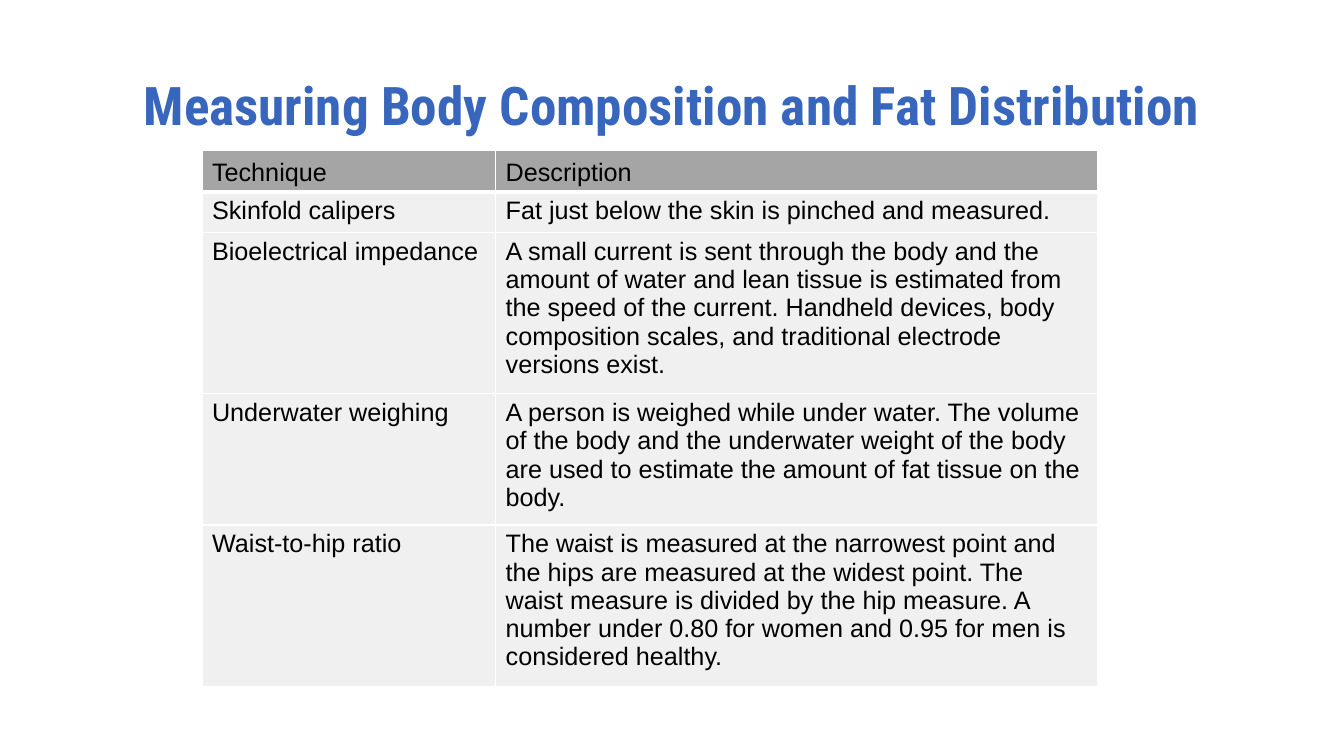
import pptx
import pptx.util
import pptx.dml.color
import pptx.enum.text
import pptx.oxml
import pptx.oxml.ns
from pptx.util import Cm

BLUE = pptx.dml.color.RGBColor(0x37, 0x66, 0xBC)
BLACK = pptx.dml.color.RGBColor(0, 0, 0)
HEADER_GREY = pptx.dml.color.RGBColor(0xA5, 0xA5, 0xA5)
BODY_GREY = pptx.dml.color.RGBColor(0xF0, 0xF0, 0xF0)
WHITE = pptx.dml.color.RGBColor(0xFF, 0xFF, 0xFF)

TECHNIQUES = [
    ("Technique", "Description"),
    ("Skinfold calipers", "Fat just below the skin is pinched and measured."),
    ("Bioelectrical impedance",
     "A small current is sent through the body and the amount of water and lean "
     "tissue is estimated from the speed of the current. Handheld devices, body "
     "composition scales, and traditional electrode versions exist."),
    ("Underwater weighing",
     "A person is weighed while under water. The volume of the body and the "
     "underwater weight of the body are used to estimate the amount of fat "
     "tissue on the body."),
    ("Waist-to-hip ratio",
     "The waist is measured at the narrowest point and the hips are measured at "
     "the widest point. The waist measure is divided by the hip measure. A "
     "number under 0.80 for women and 0.95 for men is considered healthy."),
]
COLUMN_WIDTHS = [7.4, 15.17]
ROW_HEIGHTS = [1.03, 1.03, 3.81, 3.1, 3.81]


def add_border(cell, side, points):
    border = pptx.oxml.parse_xml(
        f'<a:{side} {pptx.oxml.ns.nsdecls("a")} w="{pptx.util.Pt(points)}">'
        f'<a:solidFill><a:srgbClr val="{WHITE}"/></a:solidFill></a:{side}>')
    cell._tc.get_or_add_tcPr().append(border)


presentation = pptx.Presentation()
presentation.slide_width = Cm(33.87)
presentation.slide_height = Cm(19.05)
slide = presentation.slides.add_slide(presentation.slide_layouts[6])

title = slide.shapes.add_textbox(Cm(0), Cm(1.55), Cm(33.87), Cm(2.36)).text_frame
title.word_wrap = True
title.vertical_anchor = pptx.enum.text.MSO_ANCHOR.MIDDLE
title.margin_left = title.margin_right = title.margin_top = title.margin_bottom = 0
heading = title.paragraphs[0]
heading.text = "Measuring Body Composition and Fat Distribution"
heading.alignment = pptx.enum.text.PP_ALIGN.CENTER
heading.line_spacing = 0.9
heading.font.name = "Roboto Condensed"
heading.font.size = pptx.util.Pt(38)
heading.font.bold = True
heading.font.color.rgb = BLUE

techniques = slide.shapes.add_table(
    len(TECHNIQUES), len(COLUMN_WIDTHS), Cm(5.09), Cm(3.8),
    Cm(sum(COLUMN_WIDTHS)), Cm(sum(ROW_HEIGHTS))).table
techniques.first_row = False
techniques.horz_banding = False
for column, width in zip(techniques.columns, COLUMN_WIDTHS):
    column.width = Cm(width)

for row_index, (row, height) in enumerate(zip(techniques.rows, ROW_HEIGHTS)):
    row.height = Cm(height)
    is_header = row_index == 0
    for cell, wording in zip(row.cells, TECHNIQUES[row_index]):
        cell.text = wording
        if is_header:
            cell.vertical_anchor = pptx.enum.text.MSO_ANCHOR.BOTTOM
        for side in ("lnL", "lnR", "lnT", "lnB"):
            add_border(cell, side, 3 if is_header and side == "lnB" else 1)
        cell.fill.solid()
        cell.fill.fore_color.rgb = HEADER_GREY if is_header else BODY_GREY
        font = cell.text_frame.paragraphs[0].font
        font.name = "Arial"
        font.size = pptx.util.Pt(18)
        font.color.rgb = BLACK

presentation.save("out.pptx")
